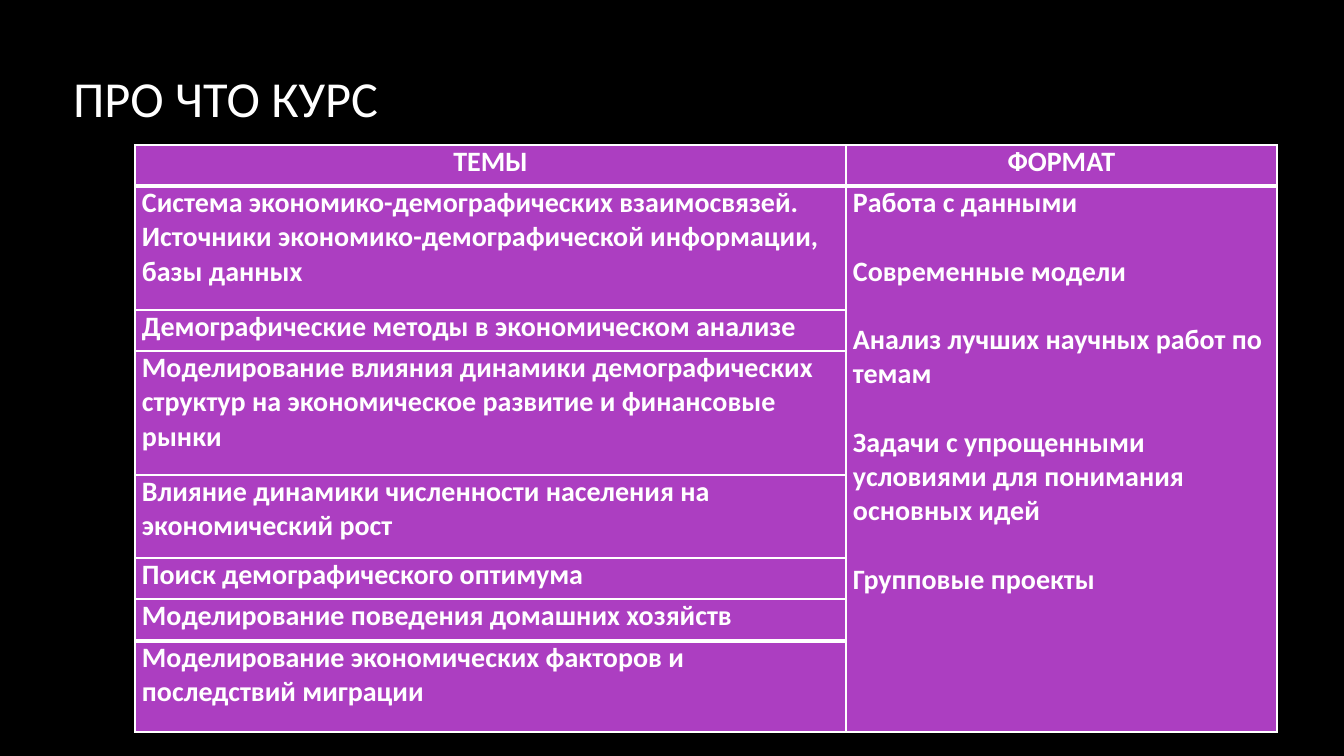
from lxml import etree
from pptx import Presentation
from pptx.dml.color import RGBColor
from pptx.enum.text import MSO_ANCHOR, PP_ALIGN
from pptx.oxml.ns import qn
from pptx.util import Emu, Pt

LEFT, CENTER = PP_ALIGN.LEFT, PP_ALIGN.CENTER
TOP, MIDDLE = MSO_ANCHOR.TOP, MSO_ANCHOR.MIDDLE

TITLE = "ПРО ЧТО КУРС"
HEADERS = ["ТЕМЫ", "ФОРМАТ"]
TOPICS = [
    "Система экономико-демографических взаимосвязей. "
    "Источники экономико-демографической информации, базы данных",
    "Демографические методы в экономическом анализе",
    "Моделирование влияния динамики демографических структур "
    "на экономическое развитие и финансовые рынки",
    "Влияние динамики численности населения на экономический рост",
    "Поиск демографического оптимума",
    "Моделирование поведения домашних хозяйств",
    "Моделирование экономических факторов и последствий миграции",
]
FORMATS = [
    "Работа с данными",
    "Современные модели",
    "Анализ лучших научных работ по темам",
    "Задачи с упрощенными условиями для понимания основных идей",
    "Групповые проекты",
]

PAGE_SIZE = (1344, 756)
TITLE_BOX = (63, 27, 983, 141)
TABLE_ORIGIN = (135, 145)
COLUMN_WIDTHS = [711, 431]
ROW_HEIGHTS = [41, 124, 41, 124, 83, 41, 42, 91]
CELL_INSET = 7
BLACK, WHITE, PURPLE = "000000", "FFFFFF", "AC3EC1"
THIN, THICK = 1, 3
FORMAT_GAP = 24.4
TITLE_FONT = {"name": "Calibri", "size": Pt(36), "bold": False}
CELL_FONT = {"name": "Calibri", "size": Pt(20), "bold": True}


def px(length):
    return Emu(round(length * 914400 / 100.8))


def color(hex_value):
    return RGBColor.from_string(hex_value)


def set_attributes(target, values):
    for name, value in values.items():
        setattr(target, name, value)


def write(frame, lines, font, align=LEFT, gap=0):
    """Fill a text frame, one paragraph a line, with gap points between them."""
    for index, line in enumerate(lines):
        para = frame.add_paragraph() if index else frame.paragraphs[0]
        para.alignment = align
        para.space_before = Pt(gap if index else 0)
        span = para.add_run()
        span.text = line
        set_attributes(span.font, font)
        span.font.color.rgb = color(WHITE)


def set_borders(cell, top, bottom):
    """Draw white sides; they must stand before the fill in the cell properties."""
    properties = cell._tc.get_or_add_tcPr()
    widths = {"a:lnL": THIN, "a:lnR": THIN, "a:lnT": top, "a:lnB": bottom}
    for index, (tag, width) in enumerate(widths.items()):
        line = etree.Element(qn(tag), w=str(Pt(width)))
        fill = etree.SubElement(line, qn("a:solidFill"))
        etree.SubElement(fill, qn("a:srgbClr"), val=WHITE)
        properties.insert(index, line)


def add_title(page):
    title = page.shapes.title
    set_attributes(title, dict(zip(("left", "top", "width", "height"), map(px, TITLE_BOX))))
    title.text_frame.vertical_anchor = MIDDLE
    write(title.text_frame, [TITLE], TITLE_FONT)


def add_course_table(page):
    row_count = len(ROW_HEIGHTS)
    table = page.shapes.add_table(
        row_count, len(COLUMN_WIDTHS), *map(px, TABLE_ORIGIN),
        px(sum(COLUMN_WIDTHS)), px(sum(ROW_HEIGHTS))).table
    for column, width in zip(table.columns, COLUMN_WIDTHS):
        column.width = px(width)
    for row, height in zip(table.rows, ROW_HEIGHTS):
        row.height = px(height)
    table.cell(1, 1).merge(table.cell(row_count - 1, 1))

    cell_format = {"margin_left": px(CELL_INSET), "margin_right": px(CELL_INSET),
                   "margin_top": 0, "margin_bottom": 0, "vertical_anchor": TOP}
    thick_edges = {(1, 0), (1, 1), (row_count - 1, 0)}
    for row in range(row_count):
        for column in range(len(COLUMN_WIDTHS)):
            cell = table.cell(row, column)
            set_attributes(cell, cell_format)
            cell.fill.solid()
            cell.fill.fore_color.rgb = color(PURPLE)
            set_borders(cell,
                        THICK if (row, column) in thick_edges else THIN,
                        THICK if (row + 1, column) in thick_edges else THIN)

    for column, header in enumerate(HEADERS):
        write(table.cell(0, column).text_frame, [header], CELL_FONT, CENTER)
    for row, topic in enumerate(TOPICS, start=1):
        write(table.cell(row, 0).text_frame, [topic], CELL_FONT)
    write(table.cell(1, 1).text_frame, FORMATS, CELL_FONT, gap=FORMAT_GAP)


def main():
    deck = Presentation()
    deck.slide_width, deck.slide_height = map(px, PAGE_SIZE)
    page = deck.slides.add_slide(deck.slide_layouts[5])
    page.background.fill.solid()
    page.background.fill.fore_color.rgb = color(BLACK)
    add_title(page)
    add_course_table(page)
    deck.save("out.pptx")


if __name__ == "__main__":
    main()
